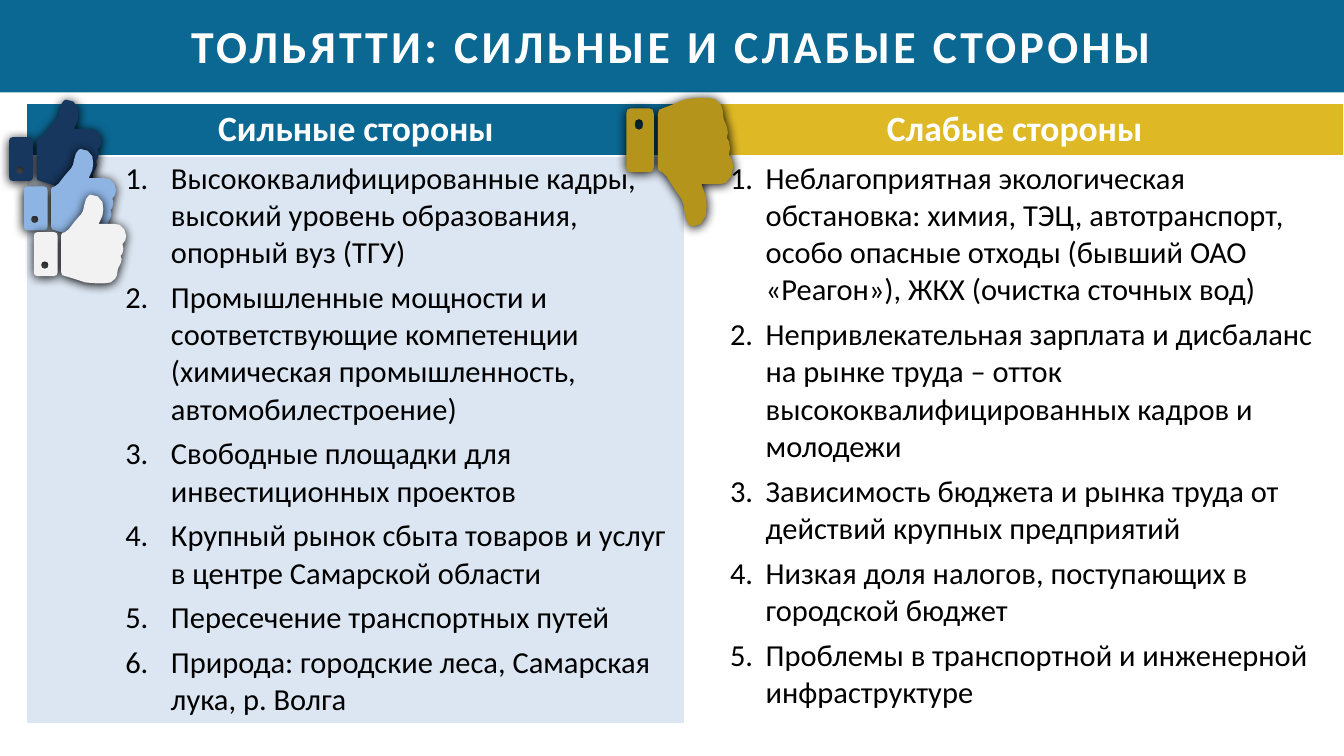
from lxml import etree
from pptx import Presentation
from pptx.dml.color import RGBColor
from pptx.enum.shapes import MSO_SHAPE
from pptx.enum.text import MSO_ANCHOR, MSO_AUTO_SIZE, PP_ALIGN
from pptx.oxml.ns import qn
from pptx.util import Inches, Pt

RECT = MSO_SHAPE.RECTANGLE
MIDDLE = MSO_ANCHOR.MIDDLE
GROW = MSO_AUTO_SIZE.SHAPE_TO_FIT_TEXT
CENTER = PP_ALIGN.CENTER

COLORS = {
    "blue": "0B6893", "gold": "DEB825", "pale": "DCE6F2",
    "white": "FFFFFF", "black": "000000", "navy": "17375E",
    "sky": "8EB4E3", "light": "F2F2F2", "ochre": "B5941B",
}

# Thumb outline on a 101 x 97 grid
THUMB_W, THUMB_H = 101, 97
CUFF = [(26, 85), (25, 88), (22, 89), (4, 89), (1, 88), (0, 85),
        (0, 45), (1, 42), (4, 41), (22, 41), (25, 42), (26, 45)]
BUTTON = [(12, 73), (9, 74), (8, 77), (9, 80), (12, 81), (15, 80), (16, 77), (15, 74)]
HAND = [(97, 54), (98, 59), (97, 64), (95, 67), (96, 71), (95, 75), (92, 81),
        (91, 88), (89, 92), (84, 96), (77, 97), (68, 97), (56, 96), (44, 92),
        (34, 89), (31, 88), (30, 85), (30, 44), (31, 42), (34, 41), (38, 38),
        (45, 29), (52, 21), (54, 17), (55, 12), (57, 5), (60, 1), (62, 0),
        (70, 2), (75, 8), (76, 16), (75, 23), (71, 32), (88, 32), (94, 33),
        (99, 38), (101, 45), (100, 50)]

# Heading, heading fill, body fill, left margin, hanging indent, points
SIDES = [
    ("Сильные стороны", "blue", "pale", 1.48, 0.5, [
        "Высококвалифицированные кадры, высокий уровень образования, опорный вуз (ТГУ)",
        "Промышленные мощности и соответствующие компетенции "
        "(химическая промышленность, автомобилестроение)",
        "Свободные площадки для инвестиционных проектов",
        "Крупный рынок сбыта товаров и услуг в центре Самарской области",
        "Пересечение транспортных путей",
        "Природа: городские леса, Самарская лука, р. Волга",
    ]),
    ("Слабые стороны", "gold", None, 0.78, 0.39, [
        "Неблагоприятная экологическая обстановка: химия, ТЭЦ, автотранспорт, "
        "особо опасные отходы (бывший ОАО «Реагон»), ЖКХ (очистка сточных вод)",
        "Непривлекательная зарплата и дисбаланс на рынке труда – отток "
        "высококвалифицированных кадров и молодежи",
        "Зависимость бюджета и рынка труда от действий крупных предприятий",
        "Низкая доля налогов, поступающих в городской бюджет",
        "Проблемы в транспортной и инженерной инфраструктуре",
    ]),
]


class Board:
    def __init__(self, slide, font="Calibri"):
        self.slide = slide
        self.font = font

    def color(self, name):
        return RGBColor.from_string(COLORS[name])

    def paint(self, shape, fill):
        shape.shadow.inherit = False
        shape.fill.solid()
        shape.fill.fore_color.rgb = self.color(fill)
        shape.line.fill.background()

    def style(self, para, size, color, bold=False):
        for run in para.runs:
            run.font.name = self.font
            run.font.size = Pt(size)
            run.font.bold = bold
            run.font.color.rgb = self.color(color)

    def band(self, x, y, w, h, fill):
        self.paint(self.slide.shapes.add_shape(
            RECT, Inches(x), Inches(y), Inches(w), Inches(h)), fill)

    def title(self, text, x, y, w, h):
        box = self.slide.shapes.add_textbox(Inches(x), Inches(y), Inches(w), Inches(h))
        frame = box.text_frame
        frame.word_wrap = True
        frame.auto_size = GROW
        frame.vertical_anchor = MIDDLE
        frame.text = text
        para = frame.paragraphs[0]
        para.alignment = CENTER
        self.style(para, 36, "white", True)
        para.runs[0].font._element.set("spc", "270")

    def cell(self, cell, fill, edges):
        props = cell._tc.get_or_add_tcPr()
        for edge in edges:
            line = etree.SubElement(props, qn("a:ln" + edge), w=str(Pt(2.25)))
            solid = etree.SubElement(line, qn("a:solidFill"))
            etree.SubElement(solid, qn("a:srgbClr"), val=COLORS["white"])
        if fill:
            cell.fill.solid()
            cell.fill.fore_color.rgb = self.color(fill)
        else:
            cell.fill.background()

    def points(self, frame, items, left, hang):
        frame.text = "\n".join(items)
        for para in frame.paragraphs:
            para.level = 1
            para.space_before = Pt(6)
            self.style(para, 24, "black")
            props = para._p.get_or_add_pPr()
            props.set("marL", str(Inches(left)))
            props.set("indent", str(-Inches(hang)))
            etree.SubElement(props, qn("a:buFont"), typeface="+mj-lt")
            etree.SubElement(props, qn("a:buAutoNum"), type="arabicPeriod")

    def table(self, sides, x, y, w, rows):
        table = self.slide.shapes.add_table(
            2, len(sides), Inches(x), Inches(y), Inches(w), Inches(sum(rows))).table
        table.first_row = table.horz_banding = False
        for row, h in zip(table.rows, rows):
            row.height = Inches(h)
        for col, (name, dark, pale, left, hang, items) in enumerate(sides):
            inner = "RL"[col]
            head, body = table.cell(0, col), table.cell(1, col)
            self.cell(head, dark, [inner, "B"])
            self.cell(body, pale, [inner, "T", "B"])
            head.text_frame.text = name
            para = head.text_frame.paragraphs[0]
            para.alignment = CENTER
            self.style(para, 28, "white", True)
            self.points(body.text_frame, items, left, hang)

    def thumb(self, x, y, w, h, fill, down=False):
        def place(point):
            px, py = point
            if down:
                py = THUMB_H - py
            return Inches(x + px * w / THUMB_W), Inches(y + py * h / THUMB_H)

        pen = None
        for outline in (CUFF, BUTTON, HAND):
            first, *rest = map(place, outline)
            if pen is None:
                pen = self.slide.shapes.build_freeform(*first)
            else:
                pen.move_to(*first)
            pen.add_line_segments(rest, close=True)
        shape = pen.convert_to_shape()
        self.paint(shape, fill)
        glow = etree.SubElement(
            shape._element.spPr.find(qn("a:effectLst")), qn("a:outerShdw"),
            blurRad=str(Pt(8.5)), dist=str(Pt(1)), dir="5400000", rotWithShape="0")
        etree.SubElement(glow, qn("a:srgbClr"), val=COLORS["black"])


def main():
    deck = Presentation()
    deck.slide_width, deck.slide_height = Inches(14.7), Inches(8.27)
    board = Board(deck.slides.add_slide(deck.slide_layouts[6]))

    # Title band
    board.band(0, 0, 14.7, 1.01, "blue")

    # Strengths and weaknesses
    board.table(SIDES, 0.29, 1.13, 14.41, [0.57, 6.22])
    board.title("ТОЛЬЯТТИ: СИЛЬНЫЕ И СЛАБЫЕ СТОРОНЫ", 0.43, 0.14, 13.83, 0.71)

    # Thumbs up and down
    for x, y, fill in [(0.1, 1.09, "navy"), (0.26, 1.63, "sky"), (0.37, 2.13, "light")]:
        board.thumb(x, y, 1.01, 0.97, fill)
    board.thumb(6.85, 1.07, 1.17, 1.41, "ochre", down=True)

    deck.save("out.pptx")


if __name__ == "__main__":
    main()
